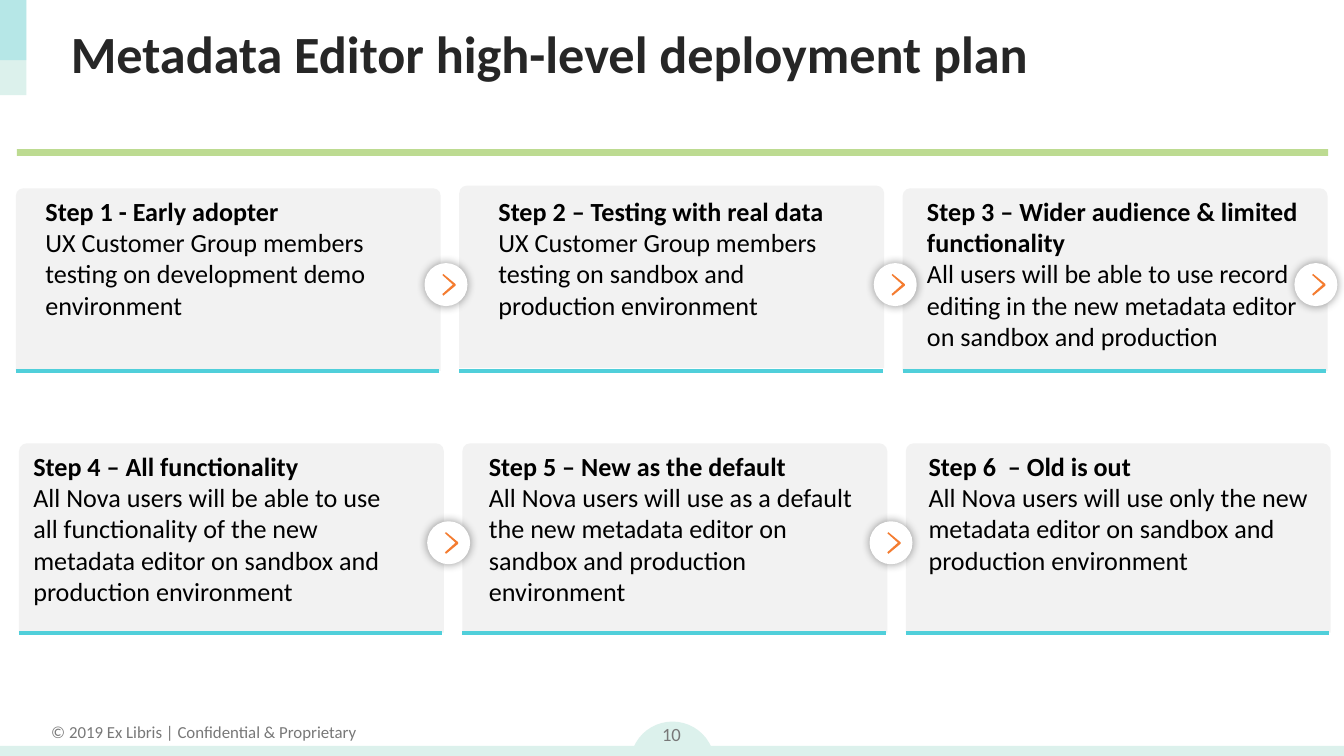
from lxml import etree
from pptx import Presentation
from pptx.dml.color import RGBColor
from pptx.enum.shapes import MSO_CONNECTOR, MSO_SHAPE
from pptx.enum.text import MSO_ANCHOR, PP_ALIGN
from pptx.oxml.ns import qn
from pptx.util import Cm, Pt

RECTANGLE = MSO_SHAPE.RECTANGLE
OVAL = MSO_SHAPE.OVAL
CARD_SHAPE = MSO_SHAPE.ROUND_2_SAME_RECTANGLE
STRAIGHT = MSO_CONNECTOR.STRAIGHT
LEFT, CENTER = PP_ALIGN.LEFT, PP_ALIGN.CENTER
TOP, MIDDLE = MSO_ANCHOR.TOP, MSO_ANCHOR.MIDDLE

MINT = RGBColor(0xDC, 0xF1, 0xEC)
TEAL = RGBColor(0x50, 0xCF, 0xDA)
GREEN = RGBColor(0xBD, 0xDB, 0x91)
PALE_GRAY = RGBColor(0xF2, 0xF2, 0xF2)
GRAY = RGBColor(0x78, 0x78, 0x78)
CHARCOAL = RGBColor(0x26, 0x26, 0x26)
BLACK = RGBColor(0, 0, 0)
WHITE = RGBColor(0xFF, 0xFF, 0xFF)
ORANGE = RGBColor(0xF4, 0x7C, 0x30)

FONT = "Calibri"
CARD_WIDTH, CARD_PITCH, RULE_LENGTH = 8.03, 8.38, 8.0
BADGE_SIZE = 0.76
CHEVRON = [(33, 18), (56, 37), (56, 40), (33, 59), (31, 56), (51, 38), (31, 20)]

FIRST_STEPS = [
    (0.61, 6.78, "Step 1 - Early adopter",
     "UX Customer Group members testing on development demo environment"),
    (9.17, 7.37, "Step 2 – Testing with real data",
     "UX Customer Group members testing on sandbox and production environment"),
    (17.27, 7.77, "Step 3 – Wider audience & limited functionality",
     "All users will be able to use record editing in the new metadata editor "
     "on sandbox and production"),
]
LAST_STEPS = [
    (0.38, 7.62, "Step 4 – All functionality",
     "All Nova users will be able to use all functionality of the new metadata "
     "editor on sandbox and production environment"),
    (8.99, 7.85, "Step 5 – New as the default",
     "All Nova users will use as a default the new metadata editor on sandbox "
     "and production environment"),
    (17.3, 7.77, "Step 6  – Old is out",
     "All Nova users will use only the new metadata editor on sandbox and "
     "production environment"),
]


def add_block(shapes, kind, left, top, width, height, color):
    """Add a flat, borderless preset shape."""
    block = shapes.add_shape(kind, Cm(left), Cm(top), Cm(width), Cm(height))
    block.shadow.inherit = False
    block.fill.solid()
    block.fill.fore_color.rgb = color
    block.line.fill.background()
    return block


def add_text(page, left, top, width, height, lines, color,
             align=LEFT, anchor=TOP, wrap=True):
    """Add a text box from (text, size, bold) lines."""
    box = page.shapes.add_textbox(Cm(left), Cm(top), Cm(width), Cm(height))
    frame = box.text_frame
    frame.word_wrap = wrap
    frame.vertical_anchor = anchor
    for index, (text, size, bold) in enumerate(lines):
        para = frame.add_paragraph() if index else frame.paragraphs[0]
        para.text = text
        para.alignment = align
        para.font.name = FONT
        para.font.size = Pt(size)
        para.font.bold = bold
        para.font.color.rgb = color


def add_rule(page, left, top):
    """Add the teal line under a card."""
    rule = page.shapes.add_connector(
        STRAIGHT, Cm(left), Cm(top), Cm(left + RULE_LENGTH), Cm(top))
    rule.line.color.rgb = TEAL
    rule.line.width = Pt(2.25)
    etree.SubElement(rule._element.spPr, qn("a:effectLst"))


def add_glow(shape):
    """Give a shape a soft shadow on all sides."""
    effects = shape._element.spPr.find(qn("a:effectLst"))
    shadow = etree.SubElement(effects, qn("a:outerShdw"), blurRad=str(Pt(5)),
                              dist="0", dir="0", algn="ctr", rotWithShape="0")
    color = etree.SubElement(shadow, qn("a:srgbClr"), val=str(BLACK))
    etree.SubElement(color, qn("a:alpha"), val="40000")


def add_badge(page, left, top):
    """Add a white disc holding an orange chevron."""
    shapes = page.shapes.add_group_shape().shapes
    disc = add_block(shapes, OVAL, left, top, BADGE_SIZE, BADGE_SIZE, WHITE)
    disc.line.color.rgb = WHITE
    disc.line.width = Pt(1.5)
    add_glow(disc)
    builder = shapes.build_freeform(*CHEVRON[0], scale=Cm(0.01))
    builder.add_line_segments(CHEVRON[1:], close=True)
    chevron = builder.convert_to_shape(Cm(left), Cm(top))
    chevron.shadow.inherit = False
    chevron.fill.solid()
    chevron.fill.fore_color.rgb = ORANGE
    chevron.line.fill.background()


def add_step_row(page, steps, left, tops, bottom, badge_lefts, badge_top):
    """Add a row of step cards with their texts, rules and badges."""
    for column, top in enumerate(tops):
        card = add_block(page.shapes, CARD_SHAPE, left + column * CARD_PITCH,
                         top, CARD_WIDTH, bottom - tops[0], PALE_GRAY)
        card.adjustments[0] = 0.042
    for column, (text_left, width, heading, body) in enumerate(steps):
        add_text(page, text_left, tops[0], width, 3.25,
                 [(heading, 14, True), (body, 14, False)], BLACK)
        add_rule(page, left + column * CARD_PITCH, bottom)
    for badge_left in badge_lefts:
        add_badge(page, badge_left, badge_top)


def add_frame(page):
    """Add the corner accents, the footer and the divider."""
    add_block(page.shapes, OVAL, 11.91, 13.64, 1.6, 1.6, MINT)
    add_text(page, 0.69, 13.51, 6.32, 0.64,
             [("© 2019 Ex Libris | Confidential & Proprietary", 9, False)],
             GRAY, align=CENTER, wrap=False)
    add_block(page.shapes, RECTANGLE, 0, 14.1, 25.4, 0.19, MINT)
    add_block(page.shapes, RECTANGLE, 0, 0, 0.5, 1.8, MINT)
    accent = add_block(page.shapes, RECTANGLE, 0, 0, 0.5, 1.14, TEAL)
    color = accent._element.spPr.find(qn("a:solidFill")).find(qn("a:srgbClr"))
    etree.SubElement(color, qn("a:alpha"), val="27000")
    add_block(page.shapes, RECTANGLE, 0.32, 2.82, 24.78, 0.13, GREEN)


def main():
    """Build the deployment plan slide."""
    deck = Presentation()
    deck.slide_width, deck.slide_height = Cm(25.4), Cm(14.29)
    page = deck.slides.add_slide(deck.slide_layouts[6])
    add_frame(page)
    add_text(page, 1.09, 0.2, 23.39, 1.6,
             [("Metadata Editor high-level deployment plan", 28, True)],
             CHARCOAL, anchor=MIDDLE)
    add_step_row(page, FIRST_STEPS, 0.3, (3.56, 3.51, 3.56), 7.01,
                 (8.05, 16.54, 24.49), 5)
    add_step_row(page, LAST_STEPS, 0.36, (8.38, 8.38, 8.38), 11.96,
                 (8.1, 16.46), 9.88)
    add_text(page, 11.94, 13.36, 1.5, 1.02, [("10", 10, False)], GRAY,
             align=CENTER, anchor=MIDDLE)
    deck.save("out.pptx")


if __name__ == "__main__":
    main()
